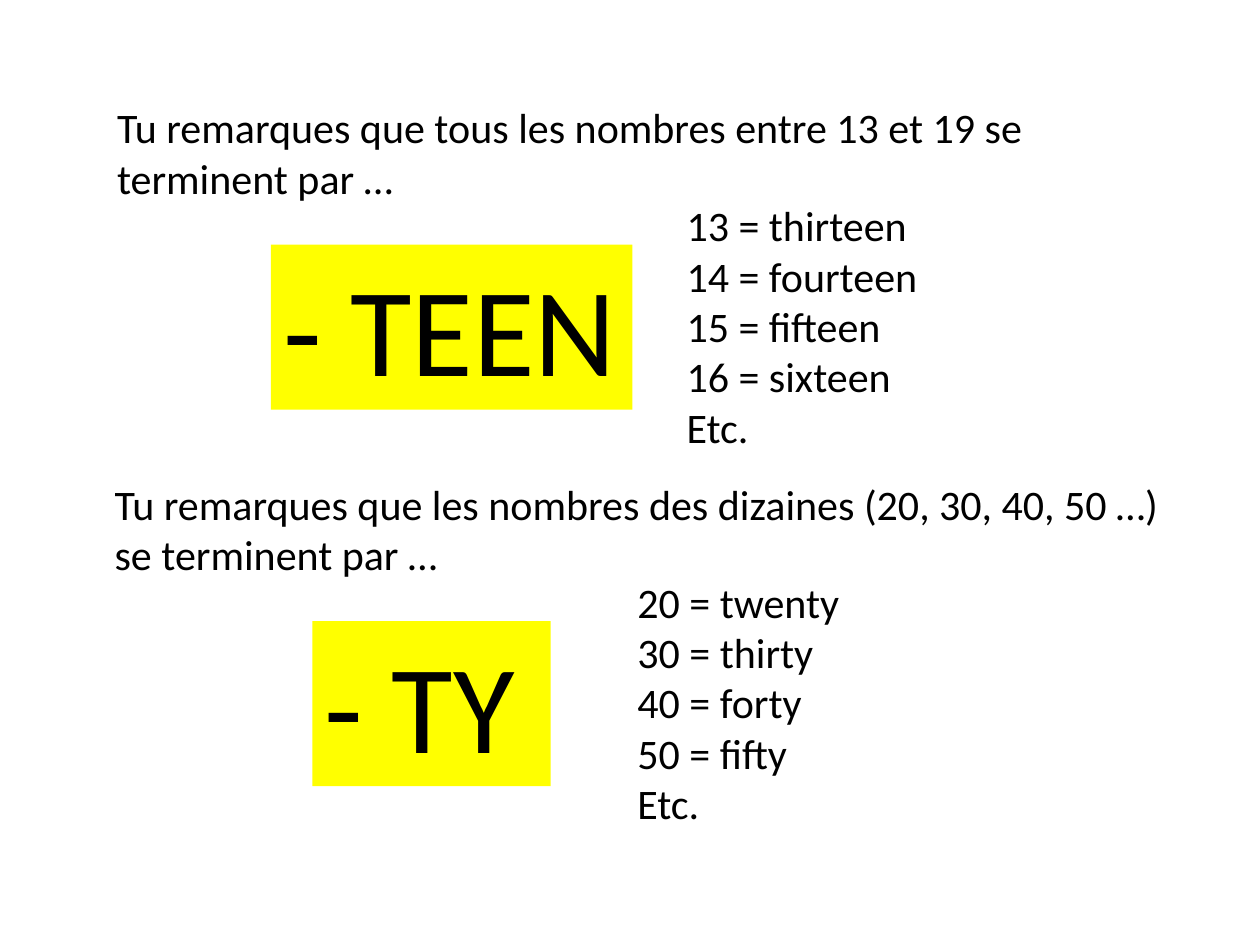
import dataclasses

import pptx
import pptx.dml.color
import pptx.enum.text
import pptx.util

Cm = pptx.util.Cm


@dataclasses.dataclass
class Rule:
    """A remark on number endings, the ending itself and some examples."""
    top: float
    remark: str
    remark_left: float
    ending: str
    ending_left: float
    ending_width: float
    examples: list[str]
    examples_left: float


RULES = [
    Rule(1.93, "Tu remarques que tous les nombres entre 13 et 19 se terminent par …", 2.11,
         "- TEEN", 5.46, 7.29,
         ["13 = thirteen", "14 = fourteen", "15 = fifteen", "16 = sixteen", "Etc."], 13.59),
    Rule(9.52, "Tu remarques que les nombres des dizaines (20, 30, 40, 50 …) se terminent par …", 2.06,
         "- TY", 6.3, 4.8,
         ["20 = twenty", "30 = thirty", "40 = forty", "50 = fifty", "Etc."], 12.6),
]


def colour(value: str) -> pptx.dml.color.RGBColor:
    return pptx.dml.color.RGBColor.from_string(value)


def add_text(page, lines: list[str], left: float, top: float, width: float,
             height: float, size: int = 24, wrap: bool = True):
    """Add a left-aligned text box with one paragraph per line."""
    box = page.shapes.add_textbox(Cm(left), Cm(top), Cm(width), Cm(height))
    frame = box.text_frame
    frame.word_wrap = wrap
    frame.auto_size = pptx.enum.text.MSO_AUTO_SIZE.SHAPE_TO_FIT_TEXT
    text_format = {"name": "Calibri", "size": pptx.util.Pt(size)}
    for index, line in enumerate(lines):
        para = frame.add_paragraph() if index else frame.paragraphs[0]
        para.alignment = pptx.enum.text.PP_ALIGN.LEFT
        span = para.add_run()
        span.text = line
        for name, value in text_format.items():
            setattr(span.font, name, value)
        span.font.color.rgb = colour("000000")
    return box


def draw_rule(page, rule: Rule) -> None:
    # Remark across the page
    add_text(page, [rule.remark], rule.remark_left, rule.top, 21.79, 2.31)
    # Highlighted ending
    ending = add_text(page, [rule.ending], rule.ending_left, rule.top + 3,
                      rule.ending_width, 3.33, size=72, wrap=True)
    ending.fill.solid()
    ending.fill.fore_color.rgb = colour("FFFF00")
    # Examples beside it
    add_text(page, rule.examples, rule.examples_left, rule.top + 1.97, 10.39, 5.38)


def main() -> None:
    deck = pptx.Presentation()
    deck.slide_width, deck.slide_height = Cm(25.4), Cm(19.05)
    # The slide has no title, so the blank layout is used
    page = deck.slides.add_slide(deck.slide_layouts[6])
    for rule in RULES:
        draw_rule(page, rule)
    deck.save("out.pptx")


if __name__ == "__main__":
    main()
